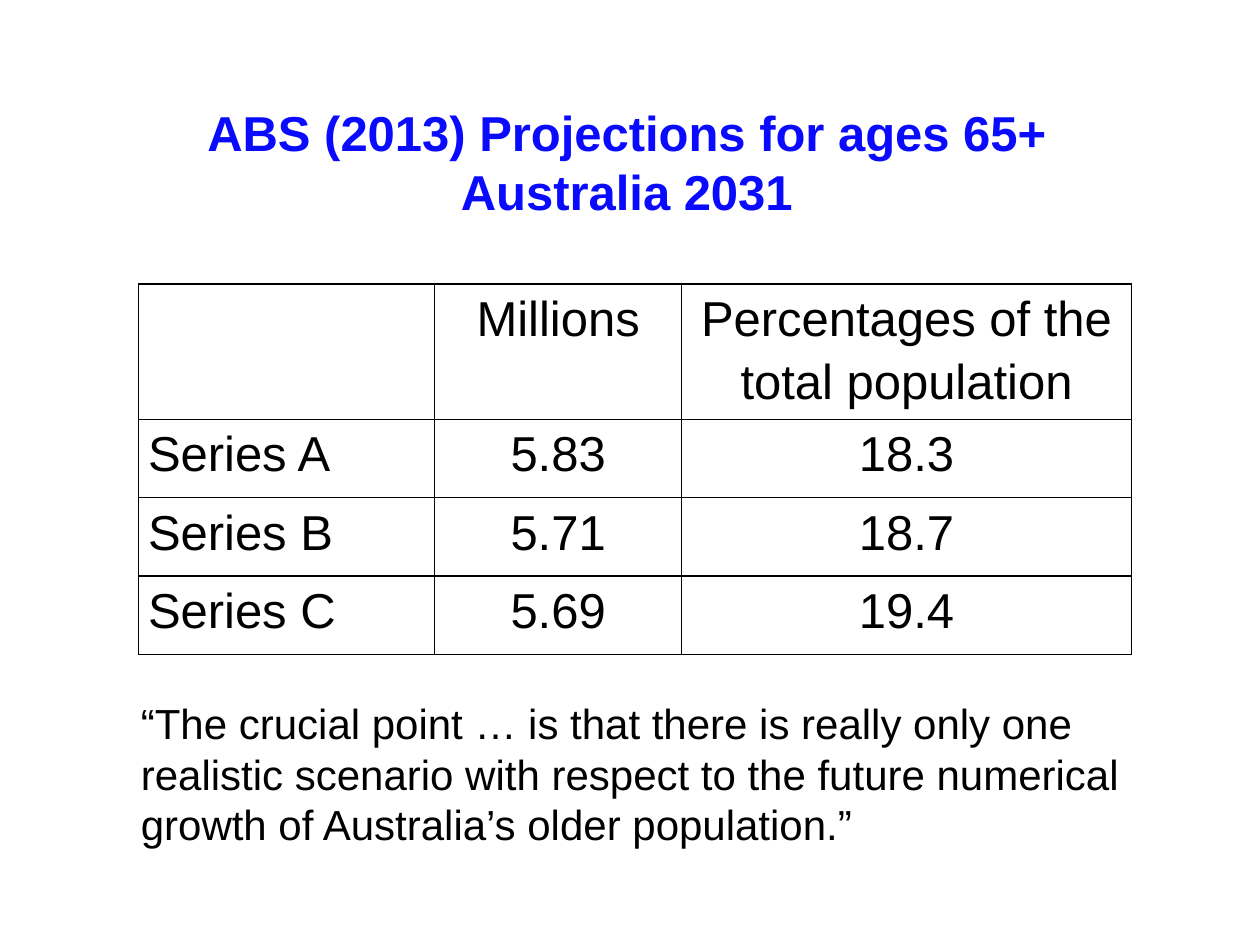
from lxml.etree import SubElement
from pptx import Presentation
from pptx.dml.color import RGBColor
from pptx.enum.text import MSO_ANCHOR, MSO_AUTO_SIZE, PP_ALIGN
from pptx.oxml.ns import qn
from pptx.util import Pt

BLACK = RGBColor(0x00, 0x00, 0x00)
BLUE = RGBColor(0x0A, 0x0A, 0xFF)

TITLE = "ABS (2013) Projections for ages 65+ Australia 2031"
QUOTE = (
    "“The crucial point … is that there is really only one realistic scenario "
    "with respect to the future numerical growth of Australia’s older population.”"
)
PROJECTIONS = [
    ["", "Millions", "Percentages of the total population"],
    ["Series A", "5.83", "18.3"],
    ["Series B", "5.71", "18.7"],
    ["Series C", "5.69", "19.4"],
]
COLUMN_WIDTHS = [169.2, 141.1, 257]
ROW_HEIGHTS = [77.2, 44.8, 44.8, 44.8]


def write_text(frame, text, size=28, color=BLACK, bold=False,
               align=PP_ALIGN.LEFT, spacing=1.0):
    frame.word_wrap = True
    para = frame.paragraphs[0]
    para.alignment = align
    para.line_spacing = spacing
    para.font.size = Pt(size)
    span = para.add_run()
    span.text = text
    span.font.name = "Arial"
    span.font.size = Pt(size)
    span.font.bold = bold
    span.font.color.rgb = color


def add_title(page, text):
    title = page.shapes.title
    title.left, title.top = Pt(69.8), Pt(54.7)
    title.width, title.height = Pt(576.7), Pt(74.9)
    frame = title.text_frame
    frame.auto_size = MSO_AUTO_SIZE.NONE
    frame.vertical_anchor = MSO_ANCHOR.MIDDLE
    write_text(frame, text, color=BLUE, bold=True, align=PP_ALIGN.CENTER)


def add_quote(page, text):
    box = page.shapes.add_textbox(Pt(73.4), Pt(395.3), Pt(591.8), Pt(94.3))
    write_text(box.text_frame, text, size=24)


def add_borders(cell):
    properties = cell._tc.get_or_add_tcPr()
    for index, side in enumerate(("a:lnL", "a:lnR", "a:lnT", "a:lnB")):
        line = properties.makeelement(qn(side), {"w": str(Pt(1))})
        properties.insert(index, line)
        fill = SubElement(line, qn("a:solidFill"))
        SubElement(fill, qn("a:srgbClr"), val=str(BLACK))


def format_cell(cell, text, align):
    cell.margin_left = cell.margin_right = Pt(5.4)
    cell.margin_top = cell.margin_bottom = 0
    cell.fill.background()
    add_borders(cell)
    if text:
        write_text(cell.text_frame, text, align=align, spacing=1.15)


def add_projection_table(page, rows):
    table = page.shapes.add_table(
        len(rows), len(COLUMN_WIDTHS), Pt(79.2), Pt(162.4),
        Pt(sum(COLUMN_WIDTHS)), Pt(sum(ROW_HEIGHTS))
    ).table
    table.first_row = table.horz_banding = False
    for column, width in zip(table.columns, COLUMN_WIDTHS):
        column.width = Pt(width)
    for row, height, texts in zip(table.rows, ROW_HEIGHTS, rows):
        row.height = Pt(height)
        for index, (cell, text) in enumerate(zip(row.cells, texts)):
            format_cell(cell, text, PP_ALIGN.CENTER if index else PP_ALIGN.LEFT)


def main():
    deck = Presentation()
    deck.slide_width, deck.slide_height = Pt(720), Pt(540)
    page = deck.slides.add_slide(deck.slide_layouts[5])
    add_projection_table(page, PROJECTIONS)
    add_title(page, TITLE)
    add_quote(page, QUOTE)
    deck.save("out.pptx")


if __name__ == "__main__":
    main()
